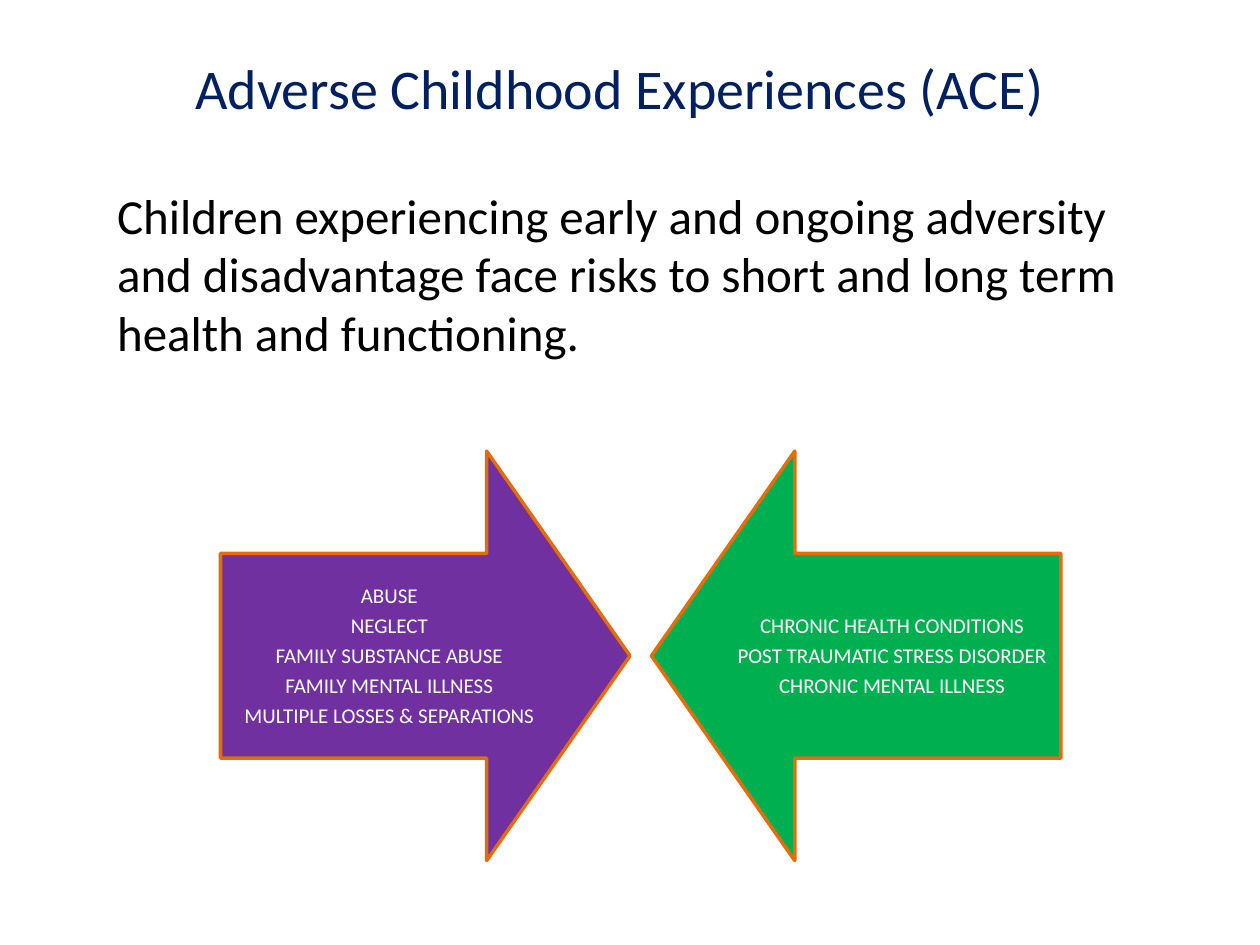
from pptx import Presentation
from pptx.dml.color import RGBColor
from pptx.enum.shapes import MSO_SHAPE as Shape
from pptx.enum.text import MSO_ANCHOR as Anchor, PP_ALIGN as Align
from pptx.util import Inches, Pt


def color(hex_value):
    return RGBColor.from_string(hex_value)


class SlideWriter:
    """Holds the deck style and the current slide."""

    font = "Calibri"
    navy, black, white, orange = "002060", "000000", "FFFFFF", "E46C0A"

    def __init__(self, presentation):
        self.slide = presentation.slides.add_slide(presentation.slide_layouts[5])

    def style(self, frame, size, hex_value, align, anchor):
        frame.word_wrap = True
        frame.vertical_anchor = anchor
        for paragraph in frame.paragraphs:
            paragraph.alignment = align
            for run in paragraph.runs:
                run.font.name = self.font
                run.font.size = Pt(size)
                run.font.color.rgb = color(hex_value)

    def title(self, text, left, top, width, height):
        heading = self.slide.shapes.title
        heading.left, heading.top = Inches(left), Inches(top)
        heading.width, heading.height = Inches(width), Inches(height)
        heading.text_frame.text = text
        self.style(heading.text_frame, 32, self.navy, Align.CENTER, Anchor.MIDDLE)

    def text_box(self, text, left, top, width, height):
        box = self.slide.shapes.add_textbox(
            Inches(left), Inches(top), Inches(width), Inches(height))
        box.text_frame.text = text
        return box.text_frame

    def statement(self, text, left, top, width, height):
        frame = self.text_box(text, left, top, width, height)
        frame.margin_left = Inches(0.6)
        self.style(frame, 28, self.black, Align.LEFT, Anchor.TOP)

    def arrow(self, left, top, size, rotation, fill):
        arrow = self.slide.shapes.add_shape(
            Shape.DOWN_ARROW, Inches(left), Inches(top), Inches(size), Inches(size))
        arrow.rotation = rotation
        arrow.adjustments[0], arrow.adjustments[1] = 0.5, 0.35
        arrow.shadow.inherit = False
        arrow.fill.solid()
        arrow.fill.fore_color.rgb = color(fill)
        arrow.line.color.rgb = color(self.orange)
        arrow.line.width = Pt(2)

    def factors(self, lines, left, top, width, height):
        frame = self.text_box("\n".join(lines), left, top, width, height)
        frame.margin_left = frame.margin_right = Inches(0.09)
        frame.margin_top = frame.margin_bottom = Inches(0.09)
        self.style(frame, 12, self.white, Align.CENTER, Anchor.MIDDLE)
        for paragraph in frame.paragraphs:
            paragraph.line_spacing = 0.9
            paragraph.space_after = Pt(4.2)


def main():
    presentation = Presentation()
    presentation.slide_width, presentation.slide_height = Inches(10), Inches(7.5)
    writer = SlideWriter(presentation)
    writer.title("Adverse Childhood Experiences (ACE)", 0.42, 0.3, 9, 0.78)
    writer.statement(
        "Children experiencing early and ongoing adversity and disadvantage "
        "face risks to short and long term health and functioning.",
        0.33, 1.42, 9.17, 5.75)

    causes = ["ABUSE", "NEGLECT", "FAMILY SUBSTANCE ABUSE",
              "FAMILY MENTAL ILLNESS", "MULTIPLE LOSSES & SEPARATIONS"]
    effects = ["CHRONIC HEALTH CONDITIONS", "POST TRAUMATIC STRESS DISORDER",
               "CHRONIC MENTAL ILLNESS"]
    sides = [(1.75, 270, "7030A0", causes, 1.75),
             (5.17, 90, "00B050", effects, 5.74)]
    for arrow_left, rotation, fill, lines, text_left in sides:
        writer.arrow(arrow_left, 3.58, 3.25, rotation, fill)
        writer.factors(lines, text_left, 4.4, 2.68, 1.62)

    presentation.save("out.pptx")


if __name__ == "__main__":
    main()
